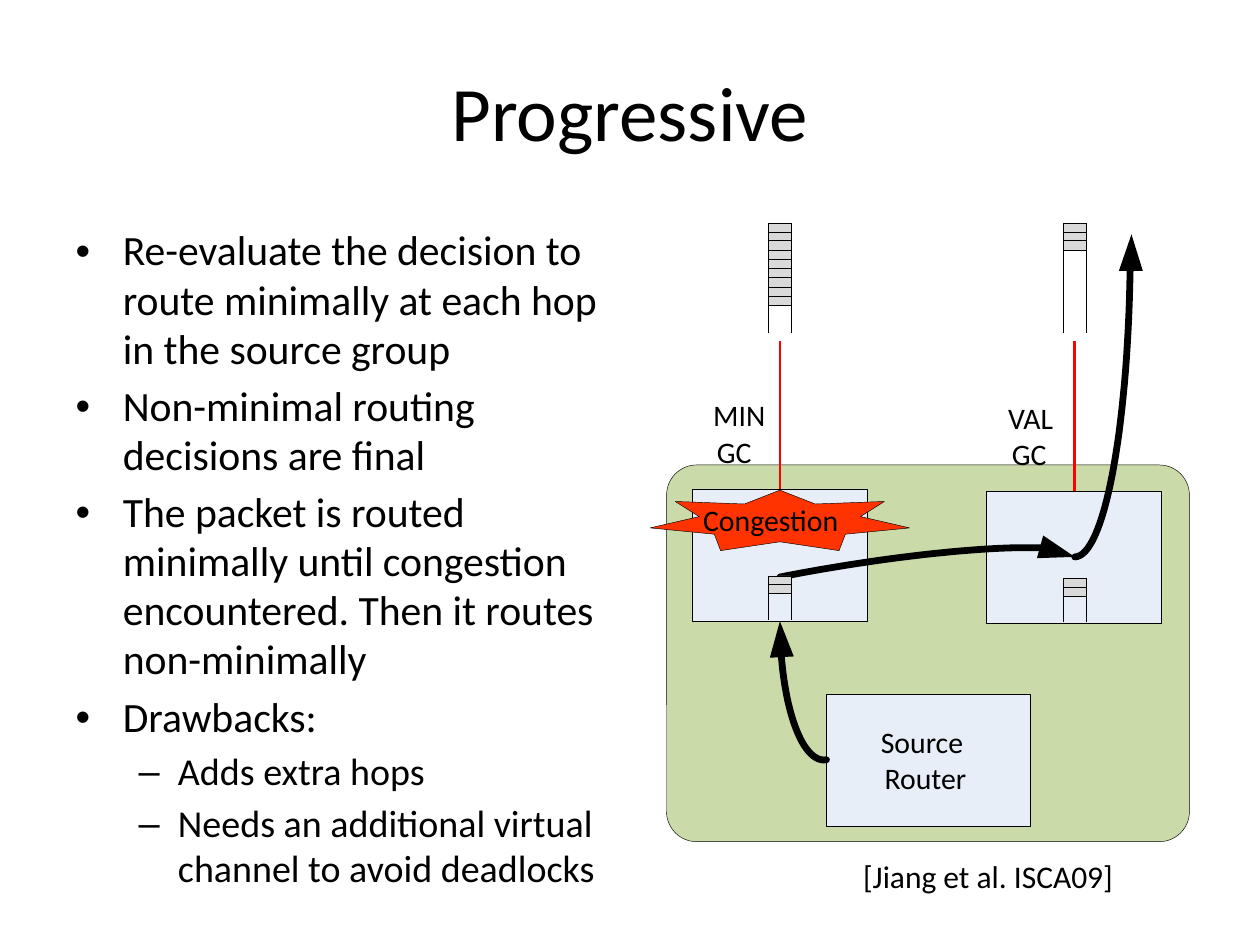
from dataclasses import dataclass

from lxml import etree
from pptx import Presentation
from pptx.dml.color import RGBColor
from pptx.enum.shapes import MSO_CONNECTOR, MSO_SHAPE
from pptx.enum.text import MSO_ANCHOR, MSO_AUTO_SIZE
from pptx.oxml.ns import qn
from pptx.util import Emu, Pt

RECT, ROUNDED = MSO_SHAPE.RECTANGLE, MSO_SHAPE.ROUNDED_RECTANGLE
STRAIGHT = MSO_CONNECTOR.STRAIGHT
TOP, MIDDLE = MSO_ANCHOR.TOP, MSO_ANCHOR.MIDDLE
NO_AUTOFIT = MSO_AUTO_SIZE.NONE

PX = 9144  # 100 px to the inch
QUEUE_W, SLOT_H = 18, 7.22


@dataclass(frozen=True)
class Theme:
    font: str = "Calibri"
    ink: str = "000000"
    group: str = "CADAA9"
    router: str = "E8EEF7"
    packet: str = "D9D9D9"
    channel: str = "FF0000"
    alert: str = "FF3300"
    title: float = 44
    levels: tuple = (23.8, 21.7)
    label: float = 17
    citation: float = 18
    hairline: float = 0.25
    channel_line: float = 1.5
    route_line: float = 3.88


THEME = Theme()

BULLETS = [
    (0, "Re-evaluate the decision to route minimally at each hop in the source group"),
    (0, "Non-minimal routing decisions are final"),
    (0, "The packet is routed minimally until congestion encountered. "
        "Then it routes non-minimally"),
    (0, "Drawbacks:"),
    (1, "Adds extra hops"),
    (1, "Needs an additional virtual channel to avoid deadlocks"),
]


def px(*lengths):
    return [Emu(round(v * PX)) for v in lengths]


def place(sp, *box):
    sp.left, sp.top, sp.width, sp.height = px(*box)


def write(p, text, size, color=THEME.ink):
    r = p.add_run()
    r.text = text
    r.font.size = Pt(size)
    r.font.name = THEME.font
    r.font.color.rgb = RGBColor.from_string(color)


def add_text(s, x, y, w, h, text, size=THEME.label, anchor=TOP):
    tf = s.shapes.add_textbox(*px(x, y, w, h)).text_frame
    tf.word_wrap = True
    tf.vertical_anchor = anchor
    tf.margin_left = tf.margin_right = tf.margin_top = tf.margin_bottom = 0
    write(tf.paragraphs[0], text, size)


def paint(sp, fill=None, line=THEME.ink, width=THEME.hairline):
    sp.shadow.inherit = False
    if fill:
        sp.fill.solid()
        sp.fill.fore_color.rgb = RGBColor.from_string(fill)
    else:
        sp.fill.background()
    if line:
        sp.line.color.rgb = RGBColor.from_string(line)
        sp.line.width = Pt(width)
    else:
        sp.line.fill.background()
    return sp


def add_box(s, x, y, w, h, fill, kind=RECT):
    return paint(s.shapes.add_shape(kind, *px(x, y, w, h)), fill)


def add_line(s, x1, y1, x2, y2, color=THEME.ink, width=THEME.hairline):
    line = s.shapes.add_connector(STRAIGHT, *px(x1, y1, x2, y2))
    line.line.color.rgb = RGBColor.from_string(color)
    line.line.width = Pt(width)
    etree.SubElement(line._element.spPr, qn("a:effectLst"))


def add_outline(shapes, points, close=True, **look):
    builder = shapes.build_freeform(*px(*points[0]), scale=1.0)
    builder.add_line_segments([px(*pt) for pt in points[1:]], close=close)
    return paint(builder.convert_to_shape(), **look)


def bezier(a, b, c, d, steps=32):
    """Points along the cubic curve from a to d."""
    ts = [i / steps for i in range(steps + 1)]
    return [tuple((1 - t) ** 3 * a[k] + 3 * (1 - t) ** 2 * t * b[k]
                  + 3 * (1 - t) * t ** 2 * c[k] + t ** 3 * d[k] for k in (0, 1))
            for t in ts]


def add_route(s, x, y, curve, head):
    """Curved thick arrow; curve and head are offsets from (x, y)."""
    curve, head = ([(x + dx, y + dy) for dx, dy in pts] for pts in (curve, head))
    shapes = s.shapes.add_group_shape().shapes
    shaft = add_outline(shapes, bezier(*curve), close=False, width=THEME.route_line)
    shaft.line._get_or_add_ln().set("cap", "rnd")
    add_outline(shapes, head, fill=THEME.ink, line=None)


def add_queue(s, cx, y, slots, length):
    """Open-ended buffer of the given length with its first slots taken."""
    left, right = cx - QUEUE_W / 2, cx + QUEUE_W / 2
    add_box(s, left, y, QUEUE_W, round(slots * SLOT_H), THEME.packet)
    for side in (left, right):
        add_line(s, side, y, side, y + length)
    for i in range(1, slots):
        level = y + round(i * SLOT_H)
        add_line(s, left, level, right, level)


def add_label_pair(s, x, y, upper, lower):
    add_text(s, x, y, 75, 28, upper)
    add_text(s, x + 3, y + 29, 71, 28, lower)


def add_global_channel(s, cx, top, router_top, slots):
    add_line(s, cx, top + 94, cx, router_top, THEME.channel, THEME.channel_line)
    add_queue(s, cx, top, slots, 87)


def add_congestion(s, cx, y):
    right = [(28, 11), (83, 9), (64, 21), (103, 30), (52, 35), (47, 48)]
    left = [(-dx, dy) for dx, dy in reversed(right)]
    star = [(0, 0), *right, (0, 41), *left]
    add_outline(s.shapes, [(cx + dx, y + dy) for dx, dy in star], fill=THEME.alert)
    add_text(s, cx - 61, y + 9, 122, 28, "Congestion")


def add_network(s, x, y, w, h):
    """Source group with its routers, their channels and the packet's route."""
    group_y = y + 192
    group = add_box(s, x, group_y, w, h - 192, THEME.group, ROUNDED)
    group.adjustments[0] = 0.08
    add_box(s, x + 127, group_y + 182, 162, 105, THEME.router)
    add_label_pair(s, x + 170, group_y + 205, "Source", "Router")

    min_cx, val_cx = x + 90, x + 324
    min_y, val_y = group_y + 19, group_y + 21
    exits = [(min_cx, min_y, 9, "MIN"), (val_cx, val_y, 3, "VAL")]
    for cx, top, slots, name in exits:
        add_box(s, cx - 70, top, 139, 105, THEME.router)
        add_global_channel(s, cx, y, top, slots)

    add_route(s, x, group_y, [(127, 234), (110, 237), (95, 202), (91, 150)],
              [(82, 153), (90, 124), (101, 152)])
    add_route(s, x, group_y, [(90, 89), (177, 72), (259, 64), (299, 66)],
              [(299, 56), (324, 73), (294, 74)])
    add_route(s, x, group_y, [(324, 73), (347, 73), (366, -26), (368, -156)],
              [(359, -154), (369, -183), (378, -154)])

    add_congestion(s, min_cx, min_y + 1)
    for cx, top, _, name in exits:
        add_queue(s, cx, top + 69, 2, 35)
        add_label_pair(s, cx - 53, top - 73, name, "GC")


def fill_title(sp, text):
    place(sp, 50, 25, 900, 125)
    write(sp.text_frame.paragraphs[0], text, THEME.title)


def fill_list(sp, items):
    place(sp, 50, 175, 442, 495)
    tf = sp.text_frame
    tf.auto_size = NO_AUTOFIT
    for i, (level, text) in enumerate(items):
        p = tf.add_paragraph() if i else tf.paragraphs[0]
        p.level = level
        p.line_spacing = 0.98
        write(p, text, THEME.levels[level])


def main():
    prs = Presentation()
    prs.slide_width, prs.slide_height = px(1000, 750)
    s = prs.slides.add_slide(prs.slide_layouts[1])
    fill_title(s.shapes.title, "Progressive")
    fill_list(s.placeholders[1], BULLETS)
    add_network(s, 529, 177, 415, 491)
    add_text(s, 685, 675, 211, 40, "[Jiang et al. ISCA09]", THEME.citation, MIDDLE)
    prs.save("out.pptx")


if __name__ == "__main__":
    main()
